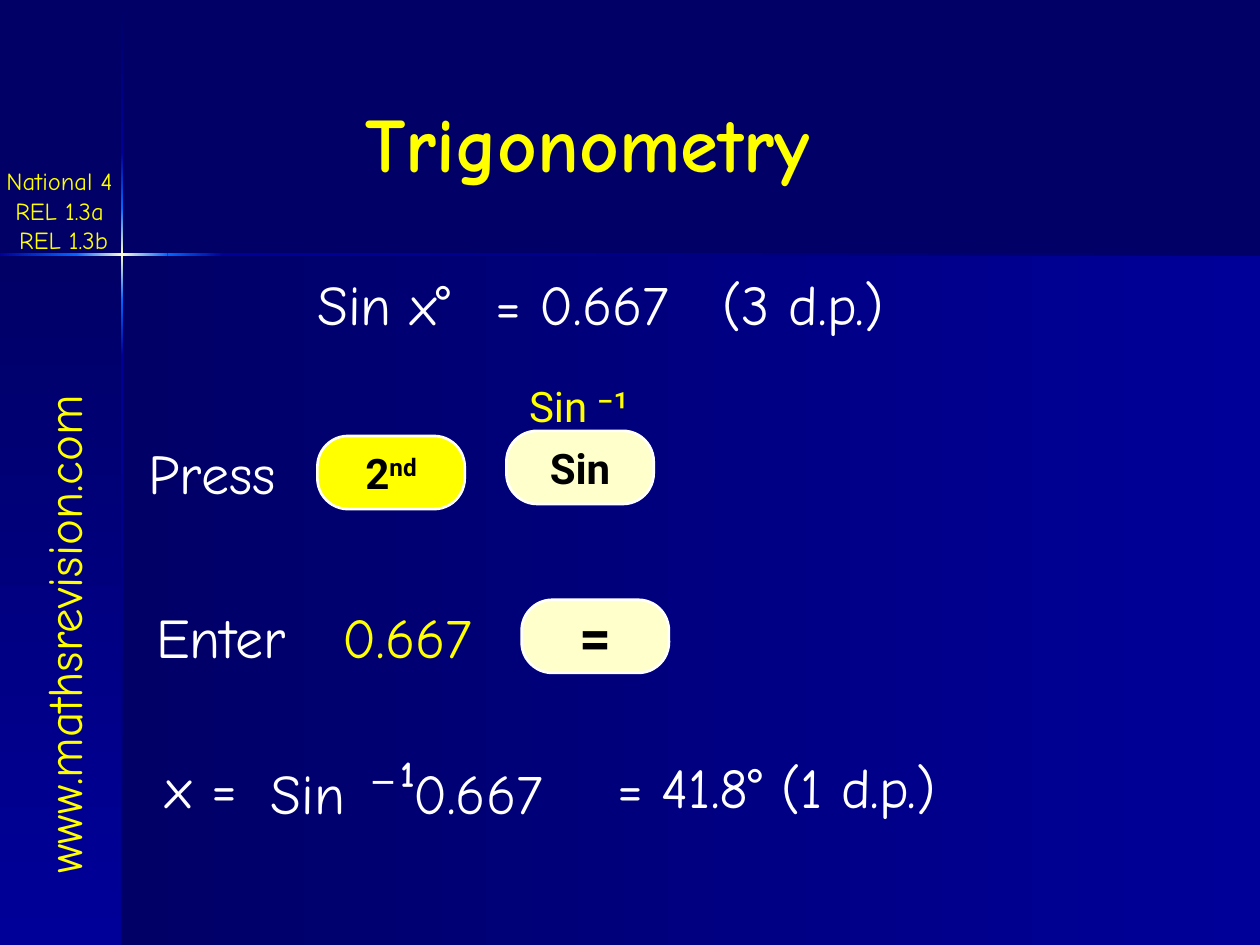
from copy import deepcopy
from dataclasses import dataclass
from itertools import pairwise

from lxml.etree import SubElement
from pptx import Presentation
from pptx.dml.color import RGBColor
from pptx.enum.shapes import MSO_SHAPE as Shape
from pptx.enum.text import MSO_ANCHOR as Anchor, MSO_AUTO_SIZE as AutoSize, PP_ALIGN as Align
from pptx.oxml.ns import qn
from pptx.util import Pt

NAVY = RGBColor(0x00, 0x00, 0x66)
BLUE = RGBColor(0x00, 0x00, 0x99)
BRIGHT = RGBColor(0x00, 0x66, 0xFF)
CREAM = RGBColor(0xFF, 0xFF, 0xCC)
YELLOW = RGBColor(0xFF, 0xFF, 0x00)
WHITE = RGBColor(0xFF, 0xFF, 0xFF)
BLACK = RGBColor(0x00, 0x00, 0x00)

HAND = "Comic Neue"
KEY = "Roboto"
MINUS = "DejaVu Sans Mono"

WIDTH, HEIGHT = 720, 540
CROSS_X, CROSS_Y = 69.8, 145.4
BAR = 1.4


@dataclass
class Run:
    text: str
    size: float = 32
    color: RGBColor = WHITE
    font: str = HAND
    bold: bool = False
    raised: bool = False


class SlideBuilder:
    def __init__(self, prs):
        self.slide = prs.slides.add_slide(prs.slide_layouts[5])
        bg = self.slide.background.fill
        bg.solid()
        bg.fore_color.rgb = NAVY

    def add_runs(self, p, runs):
        for run in runs:
            r = p.add_run()
            r.text = run.text
            r.font.size = Pt(run.size)
            r.font.name = run.font
            r.font.bold = run.bold
            r.font.color.rgb = run.color
            if run.raised:
                r._r.get_or_add_rPr().set("baseline", "30000")

    def title(self, box, run):
        sp = self.slide.shapes.title
        sp.left, sp.top, sp.width, sp.height = map(Pt, box)
        tf = sp.text_frame
        tf.vertical_anchor = Anchor.TOP
        tf.auto_size = AutoSize.NONE
        tf.word_wrap = True
        p = tf.paragraphs[0]
        p.alignment = Align.LEFT
        self.add_runs(p, [run])

    def text(self, box, *lines, wrap=False, align=Align.LEFT, rotation=0, tab=None):
        """Each line is a list of runs; tab is the position of one left tab stop."""
        sp = self.slide.shapes.add_textbox(*map(Pt, box))
        sp.rotation = rotation
        tf = sp.text_frame
        tf.word_wrap = wrap
        tf.auto_size = AutoSize.SHAPE_TO_FIT_TEXT
        for i, runs in enumerate(lines):
            p = tf.add_paragraph() if i else tf.paragraphs[0]
            p.alignment = align
            if tab:
                tabs = SubElement(p._p.get_or_add_pPr(), qn("a:tabLst"))
                SubElement(tabs, qn("a:tab"), pos=str(Pt(tab)), algn="l")
            self.add_runs(p, runs)

    def calculator_key(self, x, y, fill, *runs):
        sp = self.slide.shapes.add_shape(
            Shape.ROUNDED_RECTANGLE, Pt(x), Pt(y), Pt(84.2), Pt(41.8))
        sp.adjustments[0] = 0.42
        sp.shadow.inherit = False
        sp.fill.solid()
        sp.fill.fore_color.rgb = fill
        sp.line.color.rgb = WHITE
        sp.line.width = Pt(1.5)
        tf = sp.text_frame
        tf.word_wrap = False
        tf.vertical_anchor = Anchor.MIDDLE
        p = tf.paragraphs[0]
        p.alignment = Align.CENTER
        self.add_runs(p, runs)

    def gradient_box(self, box, colors, vertical=False):
        """Rectangle whose colours run evenly from left to right or top to bottom."""
        sp = self.slide.shapes.add_shape(Shape.RECTANGLE, *map(Pt, box))
        sp.shadow.inherit = False
        sp.line.fill.background()
        sp.fill.gradient()
        sp.fill.gradient_angle = 270 if vertical else 0
        stop_list = sp._element.spPr.find(".//" + qn("a:gsLst"))
        while len(stop_list) < len(colors):
            stop_list.append(deepcopy(stop_list[-1]))
        for i, (stop, color) in enumerate(zip(sp.fill.gradient_stops, colors)):
            stop.position = i / (len(colors) - 1)
            stop.color.rgb = color

    def glow_line(self, offset, stops, vertical=False):
        """Thin line through (position, colour) stops, with a cream glow at the crossing."""
        for (start, first), (end, last) in pairwise(stops):
            glows = first == last == BRIGHT
            colors = [first, CREAM, last] if glows else [first, last]
            if vertical:
                box = (offset, start, BAR, end - start)
            else:
                box = (start, offset, end - start, BAR)
            self.gradient_box(box, colors, vertical)


def main():
    prs = Presentation()
    prs.slide_width, prs.slide_height = Pt(WIDTH), Pt(HEIGHT)
    s = SlideBuilder(prs)

    panel_height = HEIGHT - CROSS_Y
    s.gradient_box((CROSS_X, CROSS_Y, WIDTH - CROSS_X, panel_height), [NAVY, BLUE])
    s.gradient_box((0, CROSS_Y, CROSS_X, panel_height), [NAVY, BLUE], vertical=True)
    s.glow_line(CROSS_X - BAR / 2, [(0.7, NAVY), (87.1, BLUE), (118.8, BRIGHT),
                                    (171.4, BRIGHT), (203, BLUE), (HEIGHT, NAVY)],
                vertical=True)
    s.glow_line(CROSS_Y - BAR / 2, [(0, BLUE), (43.5, BRIGHT), (95.8, BRIGHT),
                                    (127.4, BLUE), (WIDTH, NAVY)])

    s.title((201.6, 51.1, 295.9, 60.5), Run("Trigonometry", 44, YELLOW, bold=True))
    s.text((-121.7, 327.6, 316.1, 41),
           [Run("www.mathsrevision.com", 28, YELLOW)], rotation=270)
    s.text((-6.5, 91.4, 85.7, 57.6),
           *([Run(t, 14, YELLOW)] for t in ("National 4 ", "REL 1.3a ", "REL 1.3b")),
           align=Align.CENTER)

    s.text((174.2, 150.5, 108, 46), [Run("Sin x°")], wrap=True)
    s.text((275.8, 150.5, 264.2, 46), [Run("= 0.667\t(3 d.p.)")], wrap=True, tab=130)

    s.text((77.8, 247, 95, 46), [Run("Press")])
    s.calculator_key(181.4, 249.1, YELLOW, Run("2", 24, BLACK, KEY, True),
                     Run("nd", 24, BLACK, KEY, True, raised=True))
    s.calculator_key(289.4, 246.2, CREAM, Run("Sin", 24, BLACK, KEY, True))
    s.text((295.2, 213.8, 71.3, 36), [Run("Sin ⁻¹", 24, YELLOW, KEY)])

    s.text((82.1, 340.6, 99.4, 46), [Run("Enter")])
    s.text((188.6, 340.6, 100, 46), [Run("0.667", color=YELLOW)])
    s.calculator_key(298.1, 342.7, CREAM, Run("=", 32, BLACK, KEY, True))

    answer_y = 426.2
    s.text((87.8, answer_y, 59.8, 46), [Run("x =")], wrap=True)
    s.text((147.6, answer_y, 203.8, 50.4),
           [Run("Sin "), Run("⁻", 36, font=MINUS), Run("¹", 36), Run("0.667")], wrap=True)
    s.text((345.6, answer_y, 234, 46), [Run("= 41.8° (1 d.p.)")], wrap=True)

    prs.save("out.pptx")


if __name__ == "__main__":
    main()
